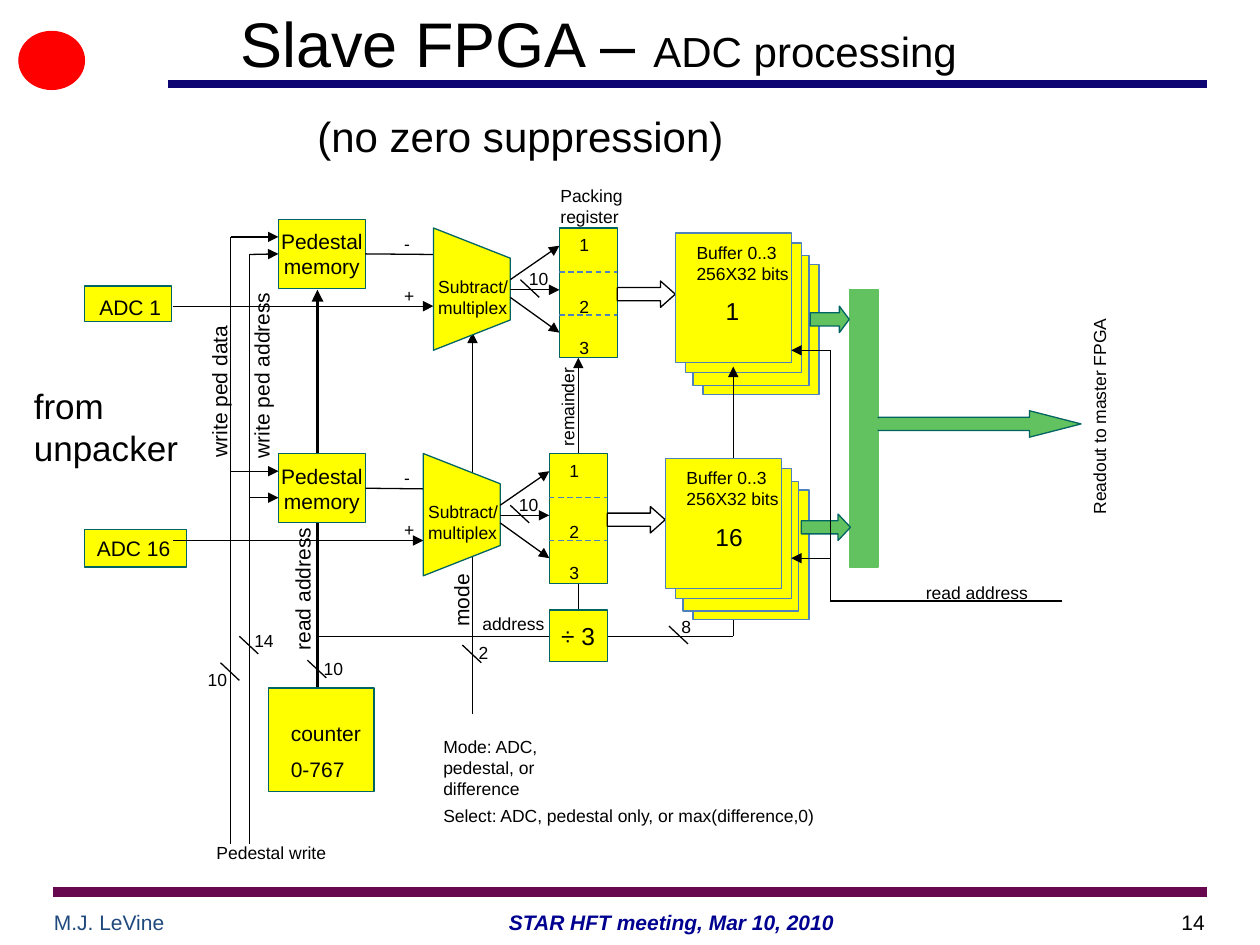
from lxml import etree
from pptx import Presentation
from pptx import util as u
from pptx.dml import color as c
from pptx.enum import dml, shapes, text as t
from pptx.oxml import ns

COLORS = {
    "black": "000000", "yellow": "FFFF00", "teal": "006462", "blue": "4F81BD",
    "green": "62C260", "navy": "0C0572", "plum": "68084E", "red": "FF0000",
    "author": "1F497D", "meeting": "000090",
}
INCH = 2.54
RECT = shapes.MSO_SHAPE.RECTANGLE
ARROW = shapes.MSO_SHAPE.RIGHT_ARROW
LEFT, CENTER, RIGHT = t.PP_ALIGN.LEFT, t.PP_ALIGN.CENTER, t.PP_ALIGN.RIGHT

deck = Presentation()
deck.slide_width, deck.slide_height = u.Cm(25.4), u.Cm(19.05)
page = deck.slides.add_slide(deck.slide_layouts[5])


def draw_line(x1, y1, x2, y2, arrow=False, color="black", width=0.75, dash=False):
    ends = [u.Cm(value * INCH) for value in (x1, y1, x2, y2)]
    line = page.shapes.add_connector(shapes.MSO_CONNECTOR.STRAIGHT, *ends)
    line.line.color.rgb = c.RGBColor.from_string(COLORS[color])
    line.line.width = u.Pt(width)
    if dash:
        line.line.dash_style = dml.MSO_LINE.DASH
    if arrow:
        etree.SubElement(line.line._get_or_add_ln(), ns.qn("a:tailEnd"), type="triangle")
    etree.SubElement(line._element.spPr, ns.qn("a:effectLst"))
    return line


def put_box(text, left, top, width, height, size=10, kind=None, fill=None, outline=None,
            color="black", align=LEFT, middle=False, wrap=False, turn=0):
    frame = [u.Cm(value * INCH) for value in (left, top, width, height)]
    if kind is None:
        box = page.shapes.add_textbox(*frame)
    else:
        box = page.shapes.add_shape(kind, *frame)
        box.shadow.inherit = False
        if fill:
            box.fill.solid()
            box.fill.fore_color.rgb = c.RGBColor.from_string(COLORS[fill])
        else:
            box.fill.background()
        if outline:
            box.line.color.rgb = c.RGBColor.from_string(COLORS[outline])
            box.line.width = u.Pt(0.75)
        else:
            box.line.fill.background()
    box.rotation = turn
    if text:
        body = box.text_frame
        body.text = text
        body.word_wrap = wrap
        body.auto_size = t.MSO_AUTO_SIZE.NONE if middle else t.MSO_AUTO_SIZE.SHAPE_TO_FIT_TEXT
        body.vertical_anchor = t.MSO_ANCHOR.MIDDLE if middle else t.MSO_ANCHOR.TOP
        for para in body.paragraphs:
            para.alignment = align
            for span in para.runs:
                span.font.name = "Arial"
                span.font.size = u.Pt(size)
                span.font.color.rgb = c.RGBColor.from_string(COLORS[color])
    return box


put_box("M.J. LeVine", 0.33, 7.17, 1.17, 0.25, 12, color="author", wrap=True)
draw_line(0.42, 7.08, 9.58, 7.08, color="plum", width=6)
put_box("14", 7.58, 7.17, 2.08, 0.25, 12, align=RIGHT, wrap=True)
meeting = put_box("STAR HFT meeting, Mar 10, 2010", 2.08, 7.17, 6.5, 0.3, 12,
                  color="meeting", align=CENTER, wrap=True)
meeting_font = meeting.text_frame.paragraphs[0].runs[0].font
meeting_font.bold = meeting_font.italic = True
put_box("", 0.15, 0.25, 0.52, 0.46, kind=shapes.MSO_SHAPE.OVAL, fill="red", outline="red")
draw_line(1.33, 0.67, 9.58, 0.67, color="navy", width=4.5)

title = page.shapes.title
title.left, title.top, title.width, title.height = u.Cm(1.27), u.Cm(0), u.Cm(21.59), u.Cm(2.34)
title.text_frame.auto_size = t.MSO_AUTO_SIZE.NONE
title.text_frame.vertical_anchor = t.MSO_ANCHOR.MIDDLE
para = title.text_frame.paragraphs[0]
para.alignment = CENTER
para.line_spacing = u.Pt(25)
for words, size in (("Slave FPGA – ", 36), ("ADC processing", 24)):
    span = para.add_run()
    span.text = words
    span.font.name = "Arial"
    span.font.size = u.Pt(size)
    span.font.color.rgb = c.RGBColor.from_string(COLORS["black"])

remainder = draw_line(4.59, 4.84, 4.59, 2.84, arrow=True)
draw_line(3.75, 5.67, 3.75, 2.64, arrow=True)
draw_line(2.52, 5.46, 2.52, 2.3, arrow=True, width=2.25)

put_box("", 0.67, 2.27, 0.69, 0.28, kind=RECT, fill="yellow", outline="teal")
put_box("ADC 1", 0.69, 2.29, 0.71, 0.3, 12)
put_box("ADC 16", 0.67, 4.2, 0.81, 0.3, 12, RECT, "yellow", "teal")
put_box("", 2.13, 5.46, 0.84, 0.82, kind=RECT, fill="yellow", outline="teal")
counter = put_box("counter\n0-767", 2.21, 5.67, 1.21, 0.61, 12, wrap=True)
counter.text_frame.paragraphs[1].space_before = u.Pt(6)

address_lines = [(2.52, 5.05, 5.82, 5.05, False), (5.82, 5.05, 5.82, 2.91, True)]
channels = [("1", 0, 0, 0, []), ("16", -0.08, 1.79, 1.86, address_lines)]
memories = []
for number, dx, dy, memory_dy, lines_behind in channels:
    for x1, y1, x2, y2, arrow in lines_behind:
        draw_line(x1, y1, x2, y2, arrow)
    memory = put_box("Pedestal\nmemory", 2.21, 1.74 + memory_dy, 0.69, 0.55, 12, RECT,
                     "yellow", "teal", align=CENTER, middle=True)
    memories.append(memory)
    draw_line(1.37, 2.43 + memory_dy, 3.44 + dx, 2.43 + memory_dy, arrow=True)
    output = draw_line(2.9, 2.02 + memory_dy, 3.44 + dx, 2.02 + memory_dy)
    output.begin_connect(memory, 3)

    corners = [(u.Cm((x + dx) * INCH), u.Cm((y + dy) * INCH))
               for x, y in ((3.44, 2.78), (4.05, 2.54), (4.05, 2.05), (3.44, 1.81))]
    builder = page.shapes.build_freeform(*corners[0])
    builder.add_line_segments(corners[1:], close=True)
    multiplexer = builder.convert_to_shape()
    multiplexer.shadow.inherit = False
    multiplexer.fill.solid()
    multiplexer.fill.fore_color.rgb = c.RGBColor.from_string(COLORS["yellow"])
    multiplexer.line.color.rgb = c.RGBColor.from_string(COLORS["teal"])
    multiplexer.line.width = u.Pt(0.75)
    put_box("Subtract/\nmultiplex", 3.38 + dx, 2.14 + dy, 0.76, 0.44)
    put_box("-", 3.11, 1.8 + memory_dy, 0.25, 0.27)
    put_box("+", 3.11, 2.21 + memory_dy, 0.28, 0.27)

    put_box("", 4.44 + dx, 1.81 + dy, 0.46, 1.03, kind=RECT, fill="yellow", outline="teal")
    for y in (2.16, 2.5):
        draw_line(4.44 + dx, y + dy, 4.9 + dx, y + dy, color="blue", dash=True)
    slots = put_box("1\n2\n3", 4.5 + dx, 1.81 + dy, 0.28, 1.11)
    for para, gap in zip(slots.text_frame.paragraphs[1:], (23, 11.5)):
        para.space_before = u.Pt(gap)
    for start, end in ((2.3, 2.3), (2.22, 1.95), (2.36, 2.64)):
        draw_line(4.05 + dx, start + dy, 4.44 + dx, end + dy, arrow=True)
    draw_line(4.13 + dx, 2.22 + dy, 4.28 + dx, 2.36 + dy)
    put_box("10", 4.1 + dx, 2.08 + dy, 0.36, 0.27)

    transfer = put_box("", 4.9 + dx, 2.23 + dy, 0.46, 0.21, kind=ARROW, outline="black")
    transfer.adjustments[1] = 0.56
    for x, y in ((5.58, 2.1), (5.5, 2.03), (5.44, 1.93), (5.36, 1.85)):
        put_box("", x + dx, y + dy, 0.92, 1.03, kind=RECT, fill="yellow", outline="blue")
    put_box("Buffer 0..3\n256X32 bits", 5.43 + dx, 1.87 + dy, 0.94, 0.44)
    put_box(number, 5.66 + dx, 2.3 + dy, 0.31 if number == "1" else 0.42, 0.34, 14)

divider = put_box("÷ 3", 4.36, 4.84, 0.46, 0.41, 14, RECT, "yellow", "teal",
                  align=CENTER, middle=True)
remainder.begin_connect(divider, 0)

for x, top, second in ((1.98, 2.02, 3.95), (1.83, 1.88, 3.74)):
    first = draw_line(x, top, 2.21, top, arrow=True)
    if x == 1.98:
        first.end_connect(memories[0], 1)
    draw_line(x, second, 2.21, second, arrow=True)
    draw_line(x, top, x, 6.7)

for x, y in ((2.44, 5.24), (3.67, 5.12), (1.75, 5.26), (1.9, 5.05), (5.31, 4.97)):
    draw_line(x, y, x + 0.15, y + 0.14)

put_box("", 6.74, 2.3, 0.23, 2.2, kind=RECT, fill="green", outline="green")
for x, y, width, head in ((6.97, 3.26, 1.61, 1.95), (6.43, 2.43, 0.31, 0.37),
                          (6.36, 4.08, 0.39, 0.47)):
    bus = put_box("", x, y, width, 0.21, kind=ARROW, fill="green", outline="teal")
    bus.adjustments[1] = head
put_box("", 6.91, 3.32, 0.08, 0.09, kind=RECT, fill="green")

draw_line(8.43, 4.77, 6.59, 4.77)
draw_line(6.59, 4.77, 6.59, 2.78)
for y in (4.43, 2.78):
    draw_line(6.59, y, 6.28, y, arrow=True)

for words, left, top, width, height, size, turn in (
    ("10", 2.47, 5.17, 0.36, 0.27, 10, 0),
    ("2", 3.7, 5.05, 0.28, 0.27, 10, 0),
    ("10", 1.55, 5.26, 0.36, 0.27, 10, 0),
    ("14", 1.92, 4.95, 0.37, 0.27, 10, 0),
    ("8", 5.31, 4.84, 0.28, 0.27, 10, 0),
    ("address", 3.73, 4.82, 0.7, 0.27, 10, 0),
    ("read address", 7.25, 4.57, 1.02, 0.27, 10, 0),
    ("Packing\nregister", 4.35, 1.42, 0.7, 0.44, 10, 0),
    ("Mode: ADC,\npedestal, or\ndifference", 3.42, 5.79, 0.96, 0.61, 10, 0),
    ("Select: ADC, pedestal only, or max(difference,0)", 3.42, 6.34, 3.22, 0.27, 10, 0),
    ("read address", 1.81, 4.52, 1.18, 0.3, 12, 270),
    ("mode", 3.35, 4.61, 0.62, 0.3, 12, 270),
    ("write ped address", 1.31, 2.82, 1.53, 0.3, 12, 270),
    ("write ped data", 1.11, 2.95, 1.26, 0.3, 12, 270),
    ("remainder", 4.09, 3.09, 0.83, 0.27, 10, 270),
    ("Readout to master FPGA", 7.83, 3.15, 1.79, 0.27, 10, 270),
):
    put_box(words, left, top, width, height, size, turn=turn)

pedestal_write = put_box("Pedestal write", 1.62, 6.66, 1.44, 0.25, wrap=True)
pedestal_write.text_frame.paragraphs[0].line_spacing = 0.85
put_box("from unpacker", 0.17, 3, 1.58, 0.77, 20, wrap=True)
put_box("(no zero suppression)", 2.42, 0.83, 5.75, 0.5, 24, wrap=True)

deck.save("out.pptx")
